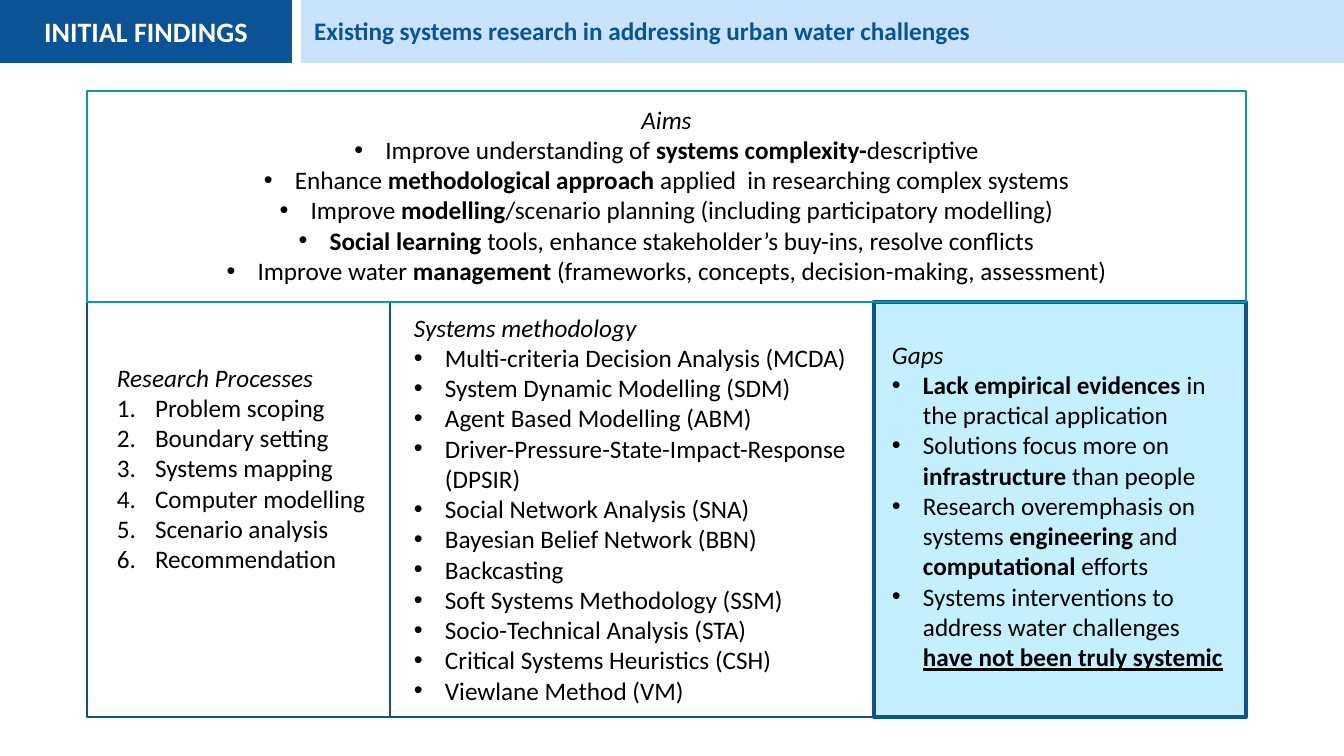
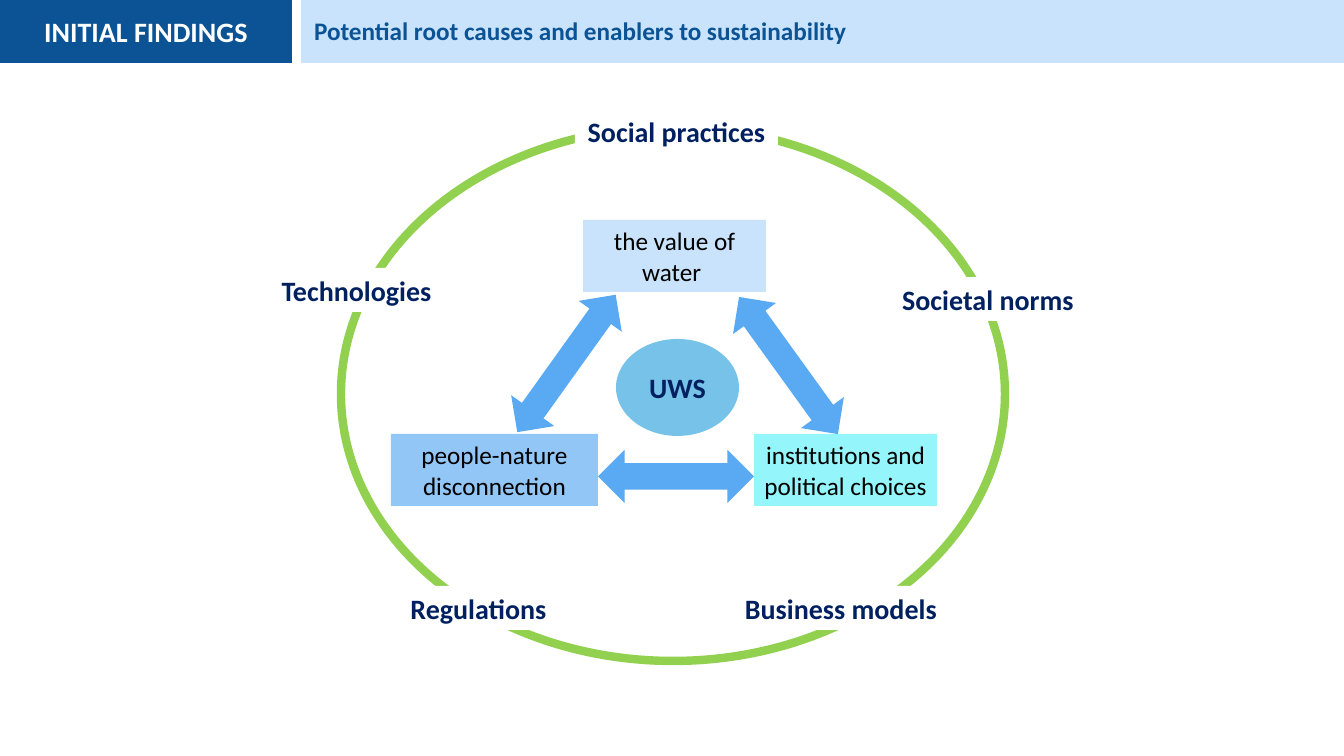
from lxml import etree
from pptx import Presentation
from pptx.dml.color import RGBColor
from pptx.enum.shapes import MSO_SHAPE
from pptx.enum.text import MSO_ANCHOR, MSO_AUTO_SIZE, PP_ALIGN
from pptx.oxml.ns import qn
from pptx.util import Emu, Pt

RECTANGLE = MSO_SHAPE.RECTANGLE
OVAL = MSO_SHAPE.OVAL
DOUBLE_ARROW = MSO_SHAPE.LEFT_RIGHT_ARROW
TOP, MIDDLE = MSO_ANCHOR.TOP, MSO_ANCHOR.MIDDLE
LEFT, CENTER = PP_ALIGN.LEFT, PP_ALIGN.CENTER
FIXED_SIZE = MSO_AUTO_SIZE.NONE
TITLE_ONLY = 5

BLUE = "0B5394"
PALE_BLUE = "C8E3FB"
FRAME_BLUE = "0B5292"
TEAL = "089AA1"
NAVY = "002060"
BLACK = "000000"
WHITE = "FFFFFF"
GREEN = "92D050"


def px(length):
    return Emu(round(length * 914400 / 100.8))


def color(value):
    return RGBColor.from_string(value)


def write(paragraph, text, size=18, fill=BLACK, bold=False, italic=False, underline=False):
    run = paragraph.add_run()
    run.text = text
    font = run.font
    font.name = "Calibri"
    font.size = Pt(size)
    font.color.rgb = color(fill)
    font.bold, font.italic, font.underline = bold, italic, underline


def add_marker(paragraph, numbered):
    properties = paragraph._p.get_or_add_pPr()
    indent = px(38 if numbered else 31)
    properties.set("marL", str(indent))
    properties.set("indent", str(-indent))
    if numbered:
        etree.SubElement(properties, qn("a:buAutoNum"), type="arabicPeriod")
    else:
        etree.SubElement(properties, qn("a:buFont"), typeface="Arial")
        etree.SubElement(properties, qn("a:buChar"), char="•")


class Deck:
    def __init__(self):
        self.presentation = Presentation()
        self.presentation.slide_width = px(1344)
        self.presentation.slide_height = px(756)
        self.slide = None

    def start_slide(self, title):
        layout = self.presentation.slide_layouts[TITLE_ONLY]
        self.slide = self.presentation.slides.add_slide(layout)
        band = self.slide.shapes.title
        band.left, band.top, band.width, band.height = map(px, (301, 0, 1043, 63))
        band.fill.solid()
        band.fill.fore_color.rgb = color(PALE_BLUE)
        paragraph = self.frame(band, MIDDLE, (13, 4, 10, 6)).paragraphs[0]
        paragraph.alignment = LEFT
        write(paragraph, title, fill=BLUE, bold=True)
        self.label((0, 0, 292, 63), "INITIAL FINDINGS", BLUE, size=20, fill=WHITE, bold=True)

    def frame(self, shape, anchor, insets):
        frame = shape.text_frame
        frame.word_wrap = True
        frame.auto_size = FIXED_SIZE
        frame.vertical_anchor = anchor
        (frame.margin_left, frame.margin_top,
         frame.margin_right, frame.margin_bottom) = map(px, insets)
        return frame

    def shape(self, kind, box, fill=None, line=None, weight=1, rotation=0):
        shape = self.slide.shapes.add_shape(kind, *map(px, box))
        shape.shadow.inherit = False
        shape.rotation = rotation
        if fill:
            shape.fill.solid()
            shape.fill.fore_color.rgb = color(fill)
        else:
            shape.fill.background()
        if line:
            shape.line.color.rgb = color(line)
            shape.line.width = Pt(weight)
        else:
            shape.line.fill.background()
        return shape

    def label(self, box, text, background, kind=RECTANGLE, **text_format):
        shape = self.shape(kind, box, background)
        paragraph = self.frame(shape, MIDDLE, (10, 5, 10, 5)).paragraphs[0]
        paragraph.alignment = CENTER
        write(paragraph, text, **text_format)

    def panel(self, box, heading, items, insets, line=FRAME_BLUE, weight=1,
              fill=None, alignment=LEFT, numbered=False):
        shape = self.shape(RECTANGLE, box, fill, line, weight)
        frame = self.frame(shape, TOP, insets)
        frame.paragraphs[0].alignment = alignment
        write(frame.paragraphs[0], heading, italic=True)
        for item in items:
            paragraph = frame.add_paragraph()
            paragraph.alignment = alignment
            add_marker(paragraph, numbered)
            for index, part in enumerate(item.split("*")):
                if part:
                    write(paragraph, part.strip("_"), bold=index % 2 == 1,
                          underline=part.startswith("_"))


def build_research_slide(deck):
    deck.start_slide("Existing systems research in addressing urban water challenges")
    left, methods, gaps, right = 87, 390, 874, 1246
    top, middle, bottom = 91, 302, 717
    height = bottom - middle
    deck.panel((gaps, middle, right - gaps, height), "Gaps", [
        "*Lack empirical evidences *in the practical application",
        "Solutions focus more on *infrastructure* than people",
        "Research overemphasis on systems *engineering* and *computational* efforts",
        "Systems interventions to address water challenges *_have not been truly systemic_*",
    ], (18, 37, 18, 5), weight=3, fill="C4EFFF")
    deck.panel((methods, middle, gaps - methods, height), "Systems methodology", [
        "Multi-criteria Decision Analysis (MCDA)",
        "System Dynamic Modelling (SDM)",
        "Agent Based Modelling (ABM)",
        "Driver-Pressure-State-Impact-Response (DPSIR)",
        "Social Network Analysis (SNA)",
        "Bayesian Belief Network (BBN)",
        "Backcasting",
        "Soft Systems Methodology (SSM)",
        "Socio-Technical Analysis (STA)",
        "Critical Systems Heuristics (CSH)",
        "Viewlane Method (VM)",
    ], (24, 10, 13, 0))
    deck.panel((left, middle, methods - left, height), "Research Processes", [
        "Problem scoping",
        "Boundary setting",
        "Systems mapping",
        "Computer modelling",
        "Scenario analysis",
        "Recommendation",
    ], (30, 60, 14, 5), numbered=True)
    deck.panel((left, top, right - left, middle - top), "Aims", [
        "Improve understanding of *systems complexity-*descriptive",
        "Enhance *methodological approach *applied  in researching complex systems",
        "Improve *modelling*/scenario planning (including participatory modelling)",
        "*Social learning *tools, enhance stakeholder’s buy-ins, resolve conflicts",
        "Improve water *management* (frameworks, concepts, decision-making, assessment)",
    ], (18, 13, 18, 5), line=TEAL, alignment=CENTER)


def build_causes_slide(deck):
    deck.start_slide("Potential root causes and enablers to sustainability")
    for left, top, width, text, background in (
        (583, 220, 183, "the value of water ", PALE_BLUE),
        (391, 434, 207, "people-nature disconnection", "91C6F7"),
        (754, 434, 183, "institutions and political choices", "94F5FA"),
    ):
        deck.label((left, top, width, 72), text, background)
    for left, top, width, rotation in (
        (482, 337, 169, 305.6),
        (704, 339, 169, 234.2),
        (598, 450, 156, 0),
    ):
        deck.shape(DOUBLE_ARROW, (left, top, width, 53), "59AAF2", rotation=rotation)
    deck.shape(OVAL, (341, 127, 664, 534), line=GREEN, weight=6)
    enabler = {"size": 20, "fill": NAVY, "bold": True}
    for left, top, width, text in (
        (266, 268, 181, "Technologies"),
        (575, 109, 203, "Social practices"),
        (729, 586, 224, "Business models"),
        (400, 586, 157, "Regulations"),
        (891, 277, 194, "Societal norms"),
    ):
        deck.label((left, top, width, 44), text, WHITE, **enabler)
    deck.label((616, 339, 123, 97), "UWS", "77C2E8", kind=OVAL, **enabler)


def main():
    deck = Deck()
    build_research_slide(deck)
    build_causes_slide(deck)
    deck.presentation.save("out.pptx")


if __name__ == "__main__":
    main()
